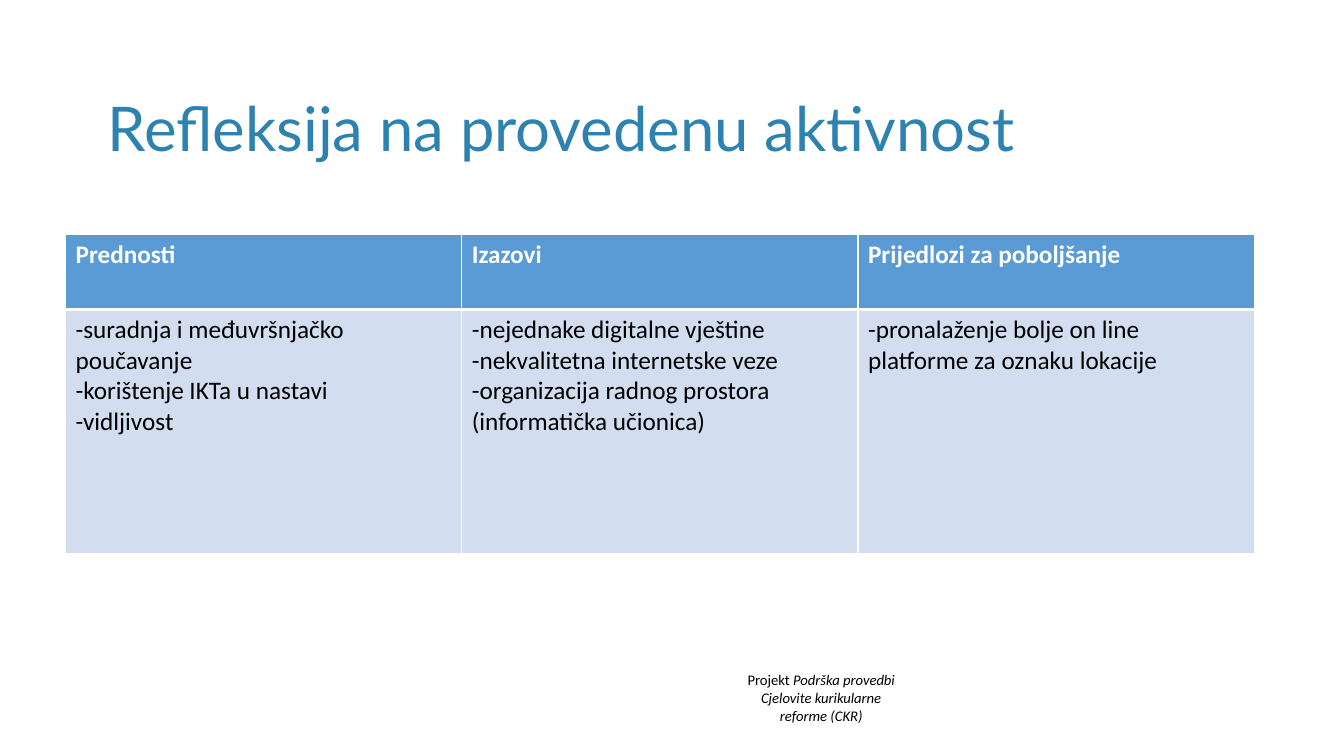
"""Build a reflection slide with a three-column table and a project footer."""
from lxml import etree
from pptx import Presentation
from pptx.dml.color import RGBColor
from pptx.enum.text import MSO_ANCHOR, PP_ALIGN
from pptx.oxml.ns import qn
from pptx.util import Inches, Pt

CENTER, LEFT = PP_ALIGN.CENTER, PP_ALIGN.LEFT
MIDDLE, TOP = MSO_ANCHOR.MIDDLE, MSO_ANCHOR.TOP
TITLE_BLUE = RGBColor(0x2E, 0x82, 0xAF)
HEADER_BLUE = RGBColor(0x5B, 0x9B, 0xD5)
BODY_BLUE = RGBColor(0xD2, 0xDE, 0xEF)
WHITE = RGBColor(0xFF, 0xFF, 0xFF)
BLACK = RGBColor(0x00, 0x00, 0x00)

COLUMN_WIDTH = 3.93
ROW_HEIGHTS = (0.74, 2.42)
REFLECTIONS = {
    "Prednosti": [
        "-suradnja i međuvršnjačko poučavanje",
        "-korištenje IKTa u nastavi",
        "-vidljivost",
    ],
    "Izazovi": [
        "-nejednake digitalne vještine",
        "-nekvalitetna internetske veze",
        "-organizacija radnog prostora (informatička učionica)",
    ],
    "Prijedlozi za poboljšanje": [
        "-pronalaženje bolje on line platforme za oznaku lokacije",
    ],
}


def add_run(paragraph, text, size, color, font="Calibri", bold=False, italic=False):
    """Append one formatted run to a paragraph."""
    run = paragraph.add_run()
    run.text = text
    run.font.name = font
    run.font.size = Pt(size)
    run.font.color.rgb = color
    run.font.bold = bold
    run.font.italic = italic


def add_text_frame(slide, left, top, width, height, anchor=TOP):
    """Add a wrapping text box and return its text frame."""
    box = slide.shapes.add_textbox(
        Inches(left), Inches(top), Inches(width), Inches(height))
    frame = box.text_frame
    frame.word_wrap = True
    frame.vertical_anchor = anchor
    return frame


def add_title(slide):
    """Add the slide title."""
    frame = add_text_frame(slide, 0.97, 0.58, 11.5, 1.45, MIDDLE)
    title = frame.paragraphs[0]
    title.alignment = LEFT
    title.line_spacing = 0.9
    add_run(title, "Refleksija na provedenu aktivnost", 44, TITLE_BLUE, "Lato")


def add_footer(slide):
    """Add the centred project name."""
    frame = add_text_frame(slide, 6.99, 6.61, 2.31, 0.63)
    project, reform = frame.paragraphs[0], frame.add_paragraph()
    project.alignment = reform.alignment = CENTER
    add_run(project, "Projekt ", 10.5, BLACK)
    add_run(project, "Podrška provedbi", 10.5, BLACK, italic=True)
    add_run(reform, "Cjelovite kurikularne", 10.5, BLACK, italic=True)
    reform.add_line_break()
    add_run(reform, "reforme (CKR)", 10.5, BLACK, italic=True)


def set_borders(cell, top, bottom):
    """Draw white cell borders with the given top and bottom widths in points."""
    properties = cell._tc.get_or_add_tcPr()
    for side, width in (("L", 1), ("R", 1), ("T", top), ("B", bottom)):
        line = etree.SubElement(properties, qn(f"a:ln{side}"), w=str(Pt(width)))
        fill = etree.SubElement(line, qn("a:solidFill"))
        etree.SubElement(fill, qn("a:srgbClr"), val=str(WHITE))


def fill_cell(cell, lines, background, color, bold, borders):
    """Write one paragraph per line and style the cell."""
    set_borders(cell, *borders)
    cell.fill.solid()
    cell.fill.fore_color.rgb = background
    frame = cell.text_frame
    for index, line in enumerate(lines):
        paragraph = frame.add_paragraph() if index else frame.paragraphs[0]
        add_run(paragraph, line, 18, color, bold=bold)


def add_reflection_table(slide):
    """Add the table of advantages, challenges and suggestions."""
    table = slide.shapes.add_table(
        len(ROW_HEIGHTS), len(REFLECTIONS), Inches(0.65), Inches(2.33),
        Inches(COLUMN_WIDTH * len(REFLECTIONS)), Inches(sum(ROW_HEIGHTS))).table
    for row, height in zip(table.rows, ROW_HEIGHTS):
        row.height = Inches(height)
    for index, (heading, points) in enumerate(REFLECTIONS.items()):
        table.columns[index].width = Inches(COLUMN_WIDTH)
        fill_cell(table.cell(0, index), [heading], HEADER_BLUE, WHITE, True, (1, 3))
        fill_cell(table.cell(1, index), points, BODY_BLUE, BLACK, False, (3, 1))


def main():
    """Build and save the slide."""
    presentation = Presentation()
    presentation.slide_width = Inches(13.33)
    presentation.slide_height = Inches(7.5)
    slide = presentation.slides.add_slide(presentation.slide_layouts[6])
    add_footer(slide)
    add_title(slide)
    add_reflection_table(slide)
    presentation.save("out.pptx")


if __name__ == "__main__":
    main()
